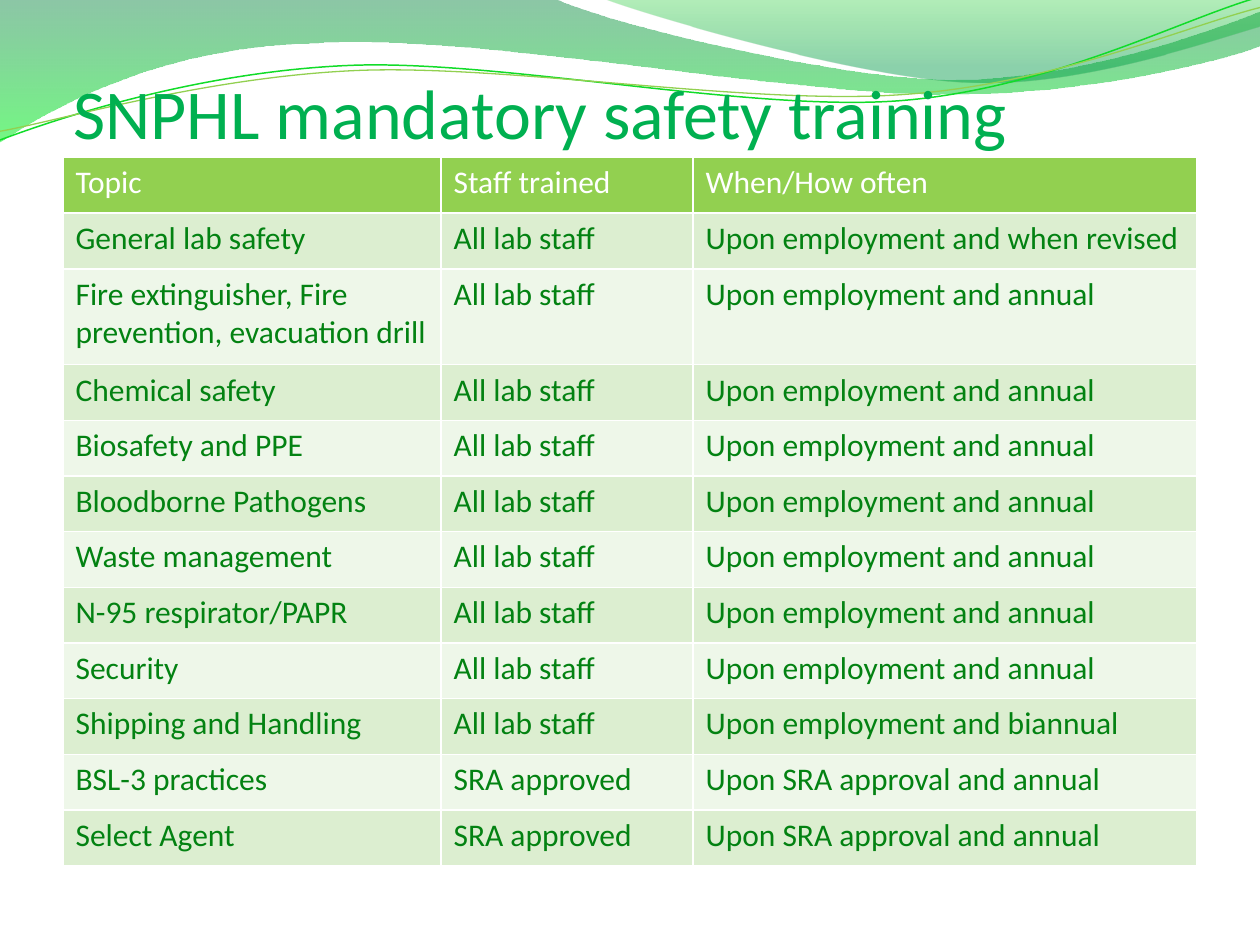
from math import cos, radians, sin

from lxml.etree import SubElement
from pptx import Presentation
from pptx.dml.color import RGBColor
from pptx.enum.text import MSO_ANCHOR, MSO_AUTO_SIZE, PP_ALIGN
from pptx.oxml import parse_xml
from pptx.oxml.ns import nsdecls, qn
from pptx.util import Pt

COLORS = {
    "title": "00B050", "header": "92D050", "body": "038212",
    "band_dark": "DCEED0", "band_light": "EEF7E9", "white": "FFFFFF",
    "deep": "00823B", "bright": "00F31D", "leaf": "00C617", "pine": "009B47",
    "line_green": "11DC29", "line_lime": "92D050",
}
FONT = "Calibri"
TILT = 2.7
EVERY = "Upon employment and annual"
SRA = "Upon SRA approval and annual"
ROWS = [
    ("Topic", "Staff trained", "When/How often"),
    ("General lab safety", "All lab staff", "Upon employment and when revised"),
    ("Fire extinguisher, Fire prevention, evacuation drill", "All lab staff", EVERY),
    ("Chemical safety", "All lab staff", EVERY),
    ("Biosafety and PPE", "All lab staff", EVERY),
    ("Bloodborne Pathogens", "All lab staff", EVERY),
    ("Waste management", "All lab staff", EVERY),
    ("N-95 respirator/PAPR", "All lab staff", EVERY),
    ("Security", "All lab staff", EVERY),
    ("Shipping and Handling", "All lab staff", "Upon employment and biannual"),
    ("BSL-3 practices", "SRA approved", SRA),
    ("Select Agent", "SRA approved", SRA),
]
BIG_WAVE = [
    [(0, 0)], [(317, -0.7)],
    [(342.7, 12.2), (478, 45.4), (546, 45.4)],
    [(614, 45.4), (690, 18.7), (720, 6.5)],
    [(720.7, 26)],
    [(707.8, 31.7), (626.4, 54.7), (537, 54)],
    [(447.8, 54), (275, 20.2), (185, 24.5)],
    [(93, 26), (33, 59.8), (-0.7, 81.4)],
]
SMALL_WAVE = [
    [(345, -0.7)],
    [(366.5, 8), (491, 44.6), (553.7, 46.8)],
    [(616.3, 49.7), (692, 23), (720, 15)],
    [(720, 0)],
]
GREEN_LINE = [
    [(0, 80)],
    [(34.6, 67), (113.8, 41), (199.4, 37.4)],
    [(284.4, 33.8), (427, 64), (513.4, 57.6)],
    [(599.8, 51), (675.4, 10.8), (718.6, -1.4)],
]
LIME_LINE = [
    [(0, 75)],
    [(33.8, 69), (118, 44), (203.8, 40.3)],
    [(290, 36.7), (429.8, 60.5), (516.2, 54)],
    [(602, 48.2), (677.5, 15), (720, 4.3)],
]


def rgb(name):
    return RGBColor.from_string(COLORS[name])


def add_path(s, x, y, segments, close):
    segments = [[(Pt(x + px), Pt(y + py)) for px, py in seg] for seg in segments]
    builder = s.shapes.build_freeform(*segments[0][0])
    builder.add_line_segments([seg[-1] for seg in segments[1:]], close=close)
    sp = builder.convert_to_shape()
    sp.shadow.inherit = False
    for step, seg in zip(list(sp.element.iter(qn("a:lnTo"))), segments[1:]):
        if len(seg) == 3:
            step.tag = qn("a:cubicBezTo")
            step.clear()
            for px, py in seg:
                SubElement(step, qn("a:pt"), x=str(px - sp.left), y=str(py - sp.top))
    return sp


def add_wave(s, x, y, segments, stops):
    sp = add_path(s, x, y, segments, True)
    sp.line.fill.background()
    sp.fill.gradient()
    sp.fill.gradient_angle = 270
    for stop, (position, color, _) in zip(sp.fill.gradient_stops, stops):
        stop.position = position
        stop.color.rgb = rgb(color)
    for clr, (_, _, alpha) in zip(sp.element.spPr.iter(qn("a:srgbClr")), stops):
        SubElement(clr, qn("a:alpha"), val=str(alpha * 1000))


def turn(point, center):
    dx, dy = point[0] - center[0], point[1] - center[1]
    c, n = cos(radians(TILT)), sin(radians(TILT))
    return center[0] + dx * c - dy * n, center[1] + dx * n + dy * c


def add_curve(s, x, y, segments, center, color, width):
    level = [[turn(point, center) for point in seg] for seg in segments]
    sp = add_path(s, x, y, level, False)
    sp.rotation = 360 - TILT
    sp.fill.background()
    sp.line.color.rgb = rgb(color)
    sp.line.width = Pt(width)


def add_banner(s, x, y):
    add_wave(s, x, y, BIG_WAVE, [(0, "deep", 45), (1, "bright", 55)])
    add_wave(s, x, y, SMALL_WAVE, [(0, "leaf", 30), (0.8, "pine", 45)])
    add_curve(s, x, y, GREEN_LINE, (359.3, 41.4), "line_green", 0.85)
    add_curve(s, x, y, LIME_LINE, (359.6, 42.5), "line_lime", 0.75)


def place_title(s, x, y, w, h):
    title = s.shapes.title
    title.element.getparent().append(title.element)
    title.left, title.top, title.width, title.height = Pt(x), Pt(y), Pt(w), Pt(h)
    tf = title.text_frame
    tf.text = "SNPHL mandatory safety training"
    tf.auto_size = MSO_AUTO_SIZE.NONE
    tf.vertical_anchor = MSO_ANCHOR.BOTTOM
    tf.margin_left = tf.margin_right = tf.margin_bottom = 0
    tf.margin_top = Pt(3.6)
    p = tf.paragraphs[0]
    p.alignment = PP_ALIGN.LEFT
    p.font.name, p.font.size = FONT, Pt(40)
    p.font.color.rgb = rgb("title")


def format_cell(cell, text, fill, color):
    cell.text = text
    cell.fill.solid()
    cell.fill.fore_color.rgb = rgb(fill)
    p = cell.text_frame.paragraphs[0]
    p.font.name, p.font.size, p.font.bold = FONT, Pt(18), False
    p.font.color.rgb = rgb(color)
    tcPr = cell._tc.get_or_add_tcPr()
    for i, side in enumerate("LRTB"):
        tcPr.insert(i, parse_xml(
            f'<a:ln{side} {nsdecls("a")} w="{Pt(1)}"><a:solidFill>'
            f'<a:srgbClr val="{COLORS["white"]}"/></a:solidFill></a:ln{side}>'))


def add_training_table(s, x, y, w, h):
    tall = 54.8
    row_height = (h - tall) / (len(ROWS) - 1)
    table = s.shapes.add_table(len(ROWS), 3, Pt(x), Pt(y), Pt(w), Pt(h)).table
    table.horz_banding = False
    for column, share in zip(table.columns, (3, 2, 4)):
        column.width = Pt(w * share / 9)
    for i, texts in enumerate(ROWS):
        table.rows[i].height = Pt(tall if i == 2 else row_height)
        band = "band_dark" if i % 2 else "band_light"
        fill, color = (band, "body") if i else ("header", "white")
        for j, text in enumerate(texts):
            format_cell(table.cell(i, j), text, fill, color)


def main():
    prs = Presentation()
    prs.slide_width, prs.slide_height = Pt(720), Pt(540)
    s = prs.slides.add_slide(prs.slide_layouts[5])
    add_banner(s, 0, 0)
    place_title(s, 42, 18, 648, 70)
    add_training_table(s, 36, 90, 648, 404.9)
    prs.save("out.pptx")


if __name__ == "__main__":
    main()
